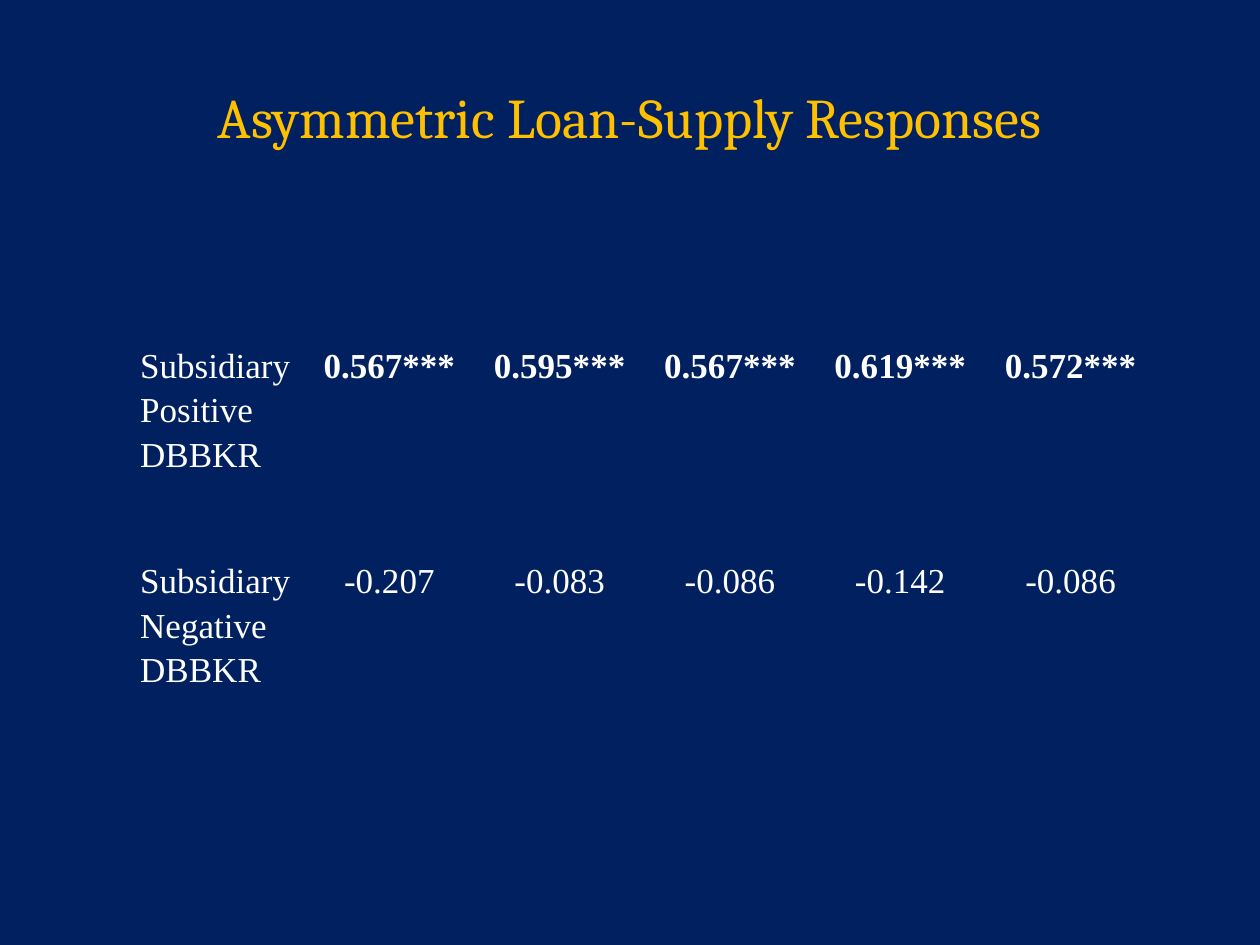
from dataclasses import dataclass

from pptx import Presentation
from pptx.dml.color import RGBColor
from pptx.enum import text
from pptx.oxml.ns import qn
from pptx.util import Pt


@dataclass(frozen=True)
class Theme:
    """Colours, fonts and type sizes of the slide."""
    background: RGBColor = RGBColor(0x00, 0x20, 0x60)
    title: RGBColor = RGBColor(0xFF, 0xC0, 0x00)
    body: RGBColor = RGBColor(0xFF, 0xFF, 0xFF)
    title_font: str = "Cambria"
    body_font: str = "Times New Roman"
    title_size: int = 32
    body_size: int = 20


THEME = Theme()
NO_STYLE_NO_GRID = "{2D5ABB26-0587-4C30-8999-92F81FD0307C}"
ROW_HEIGHTS = (76.6, 23.2, 23.2, 76.6, 38)
RESPONSES = {
    0: ("Subsidiary Positive DBBKR", "0.567***", "0.595***", "0.567***", "0.619***", "0.572***"),
    3: ("Subsidiary Negative DBBKR", "-0.207", "-0.083", "-0.086", "-0.142", "-0.086"),
}


def style_paragraph(p, font, size, color, align, bold=False):
    """Set the alignment and font of a paragraph."""
    p.alignment = align
    p.font.name = font
    p.font.size = Pt(size)
    p.font.color.rgb = color
    p.font.bold = bold


def add_title(s, left, top, width, height):
    """Place the centred slide title in the given box."""
    tf = s.shapes.add_textbox(Pt(left), Pt(top), Pt(width), Pt(height)).text_frame
    tf.word_wrap = True
    tf.vertical_anchor = text.MSO_ANCHOR.MIDDLE
    p = tf.paragraphs[0]
    p.text = "Asymmetric Loan-Supply Responses"
    style_paragraph(p, THEME.title_font, THEME.title_size, THEME.title, text.PP_ALIGN.CENTER)


def add_responses(s, left, top, width):
    """Place the table of coefficients, with equal columns, in the given width."""
    columns = len(RESPONSES[0])
    table = s.shapes.add_table(len(ROW_HEIGHTS), columns, Pt(left), Pt(top),
                               Pt(width), Pt(sum(ROW_HEIGHTS))).table
    table.first_row = table.horz_banding = False
    table._tbl.tblPr.find(qn("a:tableStyleId")).text = NO_STYLE_NO_GRID
    for column in table.columns:
        column.width = Pt(width / columns)
    for i, height in enumerate(ROW_HEIGHTS):
        table.rows[i].height = Pt(height)
        values = RESPONSES.get(i, ("",) * columns)
        for j, value in enumerate(values):
            cell = table.cell(i, j)
            cell.fill.background()
            cell.margin_left = cell.margin_right = Pt(3.6)
            cell.margin_top = cell.margin_bottom = 0
            if value:
                p = cell.text_frame.paragraphs[0]
                p.text = value
                p.line_spacing = 1.15
                align = text.PP_ALIGN.CENTER if j else text.PP_ALIGN.LEFT
                style_paragraph(p, THEME.body_font, THEME.body_size, THEME.body,
                                align, bold=value.endswith("***"))


def main():
    """Build and save the slide."""
    prs = Presentation()
    prs.slide_width, prs.slide_height = Pt(720), Pt(540)
    s = prs.slides.add_slide(prs.slide_layouts[6])
    s.background.fill.solid()
    s.background.fill.fore_color.rgb = THEME.background
    add_responses(s, 76.5, 195, 584)
    add_title(s, 36, 21.6, 648, 90)
    prs.save("out.pptx")


if __name__ == "__main__":
    main()
